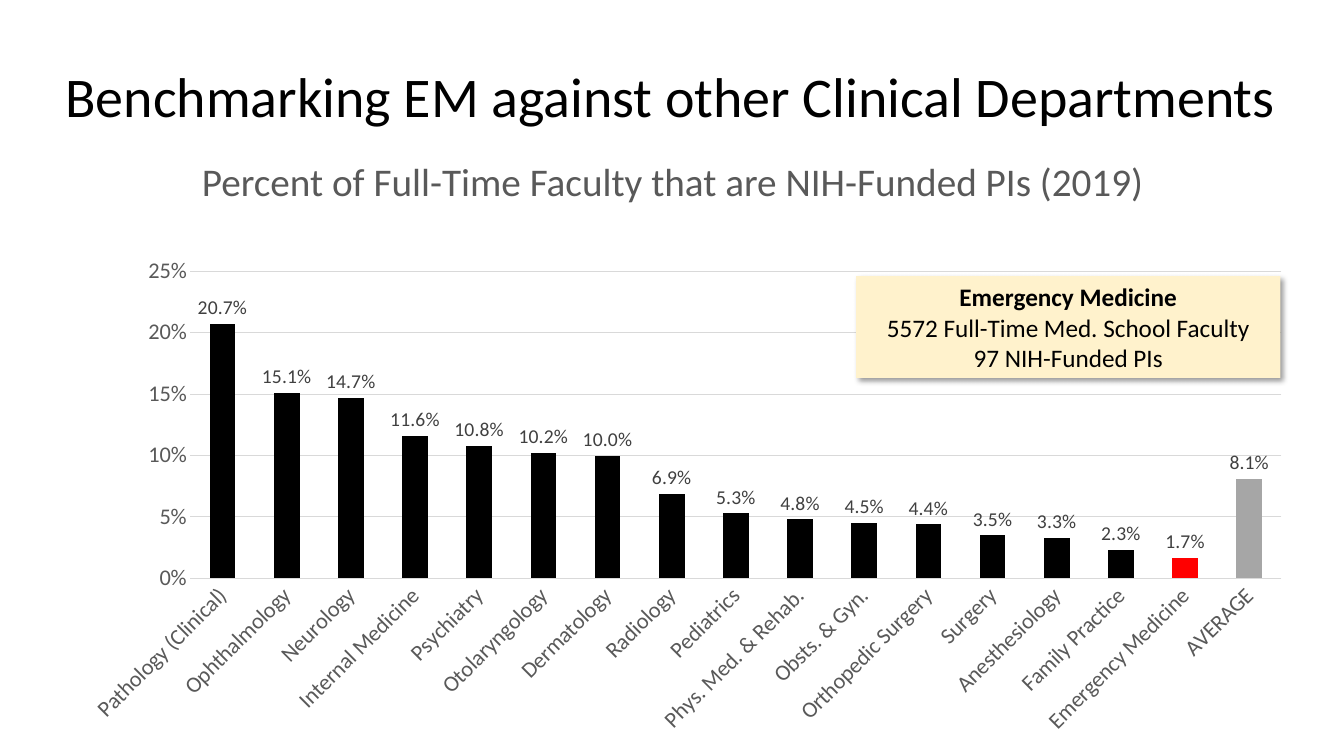
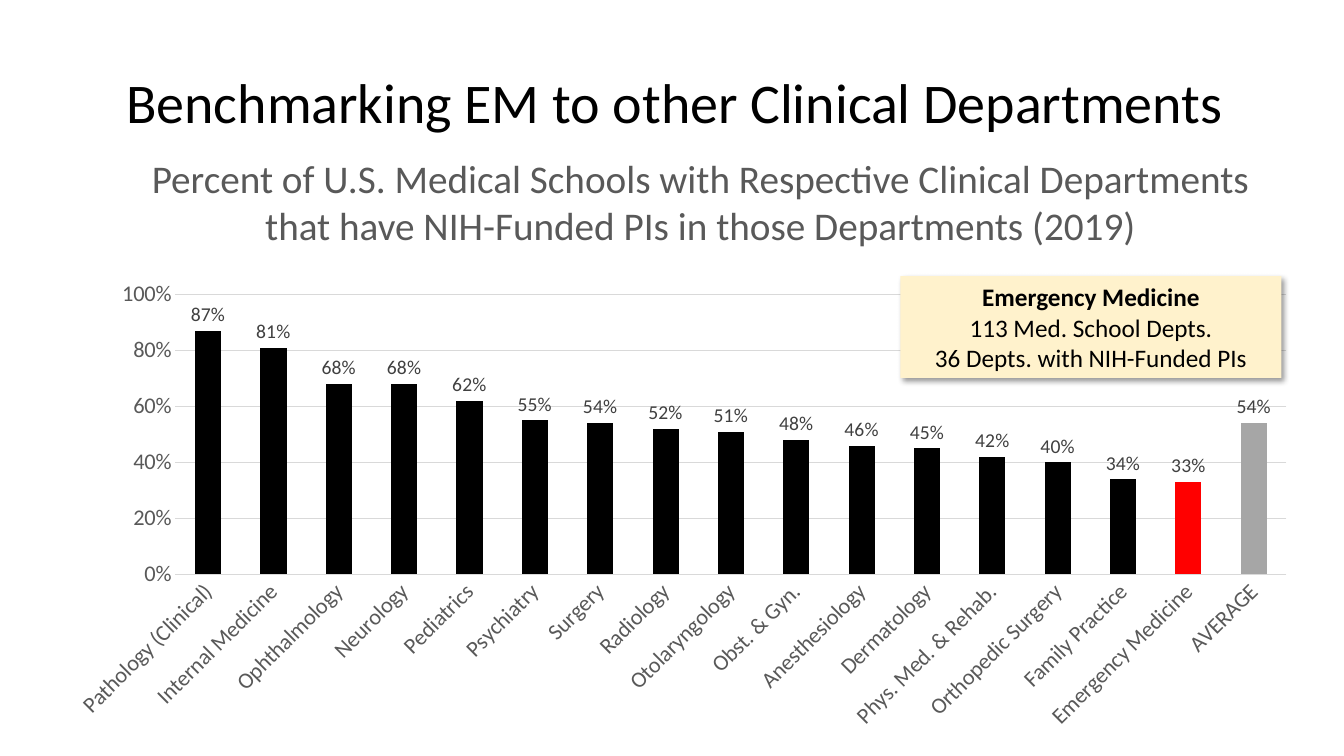
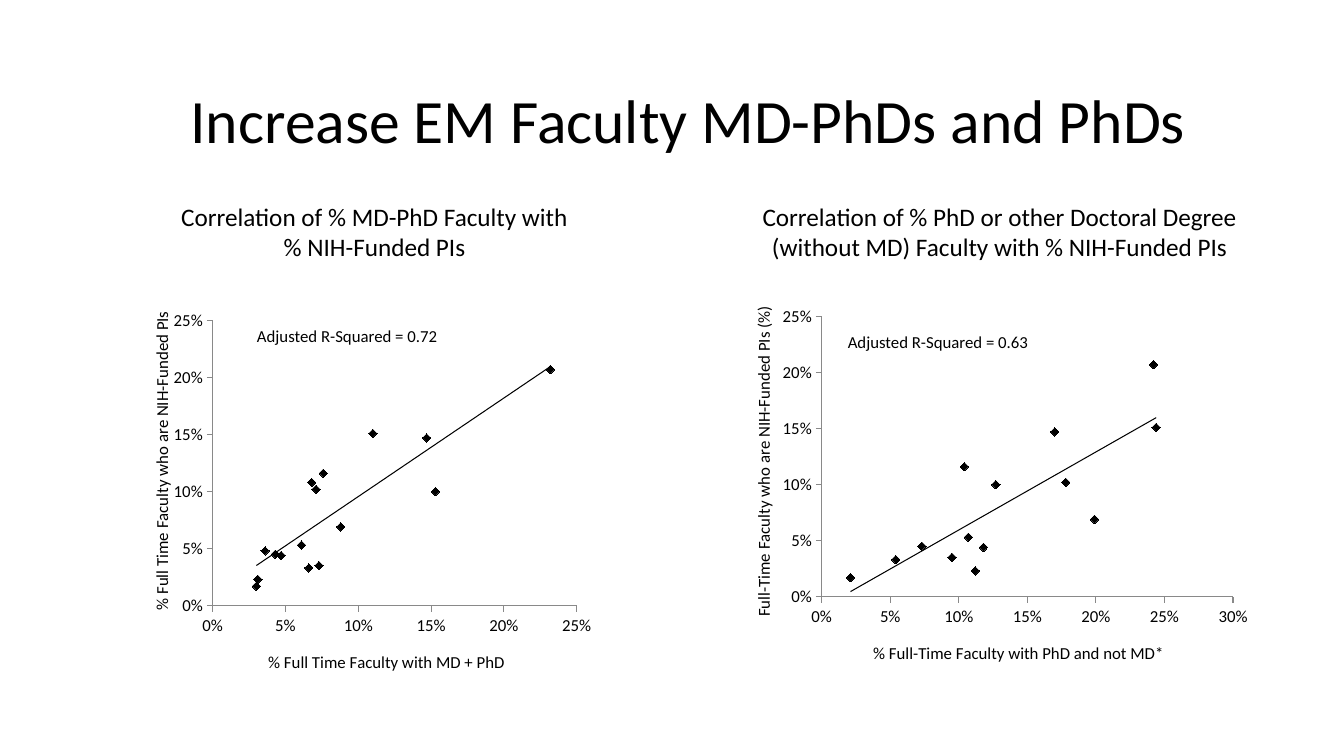
from pptx import Presentation
from pptx.chart.data import CategoryChartData, XyChartData
from pptx.dml.color import RGBColor
from pptx.enum.chart import (XL_CHART_TYPE, XL_LABEL_POSITION,
                             XL_MARKER_STYLE, XL_TICK_MARK)
from pptx.enum.shapes import MSO_SHAPE
from pptx.enum.text import MSO_ANCHOR, MSO_AUTO_SIZE, PP_ALIGN
from pptx.oxml import parse_xml
from pptx.oxml.ns import nsdecls, qn
from pptx.util import Pt

PX = 9144  # EMU in one px, 100 px to the inch
FONT = "Calibri"
COLORS = {
    "ink": "000000", "gray": "595959", "label": "404040", "grid": "D9D9D9",
    "axis": "898989", "focus": "FF0000", "average": "A6A6A6", "note": "FFF2CC",
}


def color(name):
    return RGBColor.from_string(COLORS[name])


def set_layout(parent, index, frame, place, target=""):
    """Place a plot area or chart title; both boxes are in slide px."""
    for old in parent.findall(qn("c:layout")):
        parent.remove(old)
    left, top, width, height = frame
    fractions = {"x": (place[0] - left) / width, "y": (place[1] - top) / height}
    if len(place) == 4:
        fractions.update(w=place[2] / width, h=place[3] / height)
    parts = [f'<c:{key}Mode val="edge"/>' for key in "xy"]
    parts += [f'<c:{key} val="{value:.4f}"/>' for key, value in fractions.items()]
    parent.insert(index, parse_xml(
        f'<c:layout {nsdecls("c")}><c:manualLayout>{target}'
        f'{"".join(parts)}</c:manualLayout></c:layout>'))


class Slides:
    def __init__(self):
        self.deck = Presentation()
        self.deck.slide_width, self.deck.slide_height = 1333 * PX, 750 * PX
        self.page = None

    def style_font(self, font, size, ink="ink", bold=False):
        font.name, font.size, font.bold = FONT, Pt(size), bold
        font.color.rgb = color(ink)

    def set_text(self, box, text, size, ink="ink", align=PP_ALIGN.CENTER):
        box.text_frame.text = text
        for para in box.text_frame.paragraphs:
            para.alignment = align
            for span in para.runs:
                self.style_font(span.font, size, ink)

    def add_page(self, title, place, size=40, align=PP_ALIGN.CENTER):
        self.page = self.deck.slides.add_slide(self.deck.slide_layouts[5])
        box = self.page.shapes.title
        box.left, box.top, box.width, box.height = (n * PX for n in place)
        self.set_text(box, title, size, align=align)
        frame = box.text_frame
        frame.vertical_anchor = MSO_ANCHOR.MIDDLE
        frame.auto_size = MSO_AUTO_SIZE.NONE
        frame.paragraphs[0].line_spacing = 0.9

    def add_text(self, text, place, size, ink="ink", align=PP_ALIGN.CENTER, wrap=True):
        box = self.page.shapes.add_textbox(*(n * PX for n in place))
        box.text_frame.word_wrap = wrap
        self.set_text(box, text, size, ink, align)

    def add_note(self, text, place):
        box = self.page.shapes.add_shape(MSO_SHAPE.RECTANGLE, *(n * PX for n in place))
        box.fill.solid()
        box.fill.fore_color.rgb = color("note")
        box.line.fill.background()
        box.shadow.inherit = False
        # Soft shadow to the lower right
        box.element.spPr.find(qn("a:effectLst")).append(parse_xml(
            f'<a:outerShdw {nsdecls("a")} blurRad="50800" dist="38100" '
            'dir="2700000" algn="tl" rotWithShape="0"><a:srgbClr val="000000">'
            '<a:alpha val="40000"/></a:srgbClr></a:outerShdw>'))
        self.set_text(box, text, 18)
        box.text_frame.paragraphs[0].runs[0].font.bold = True

    def add_chart(self, kind, data, place, plot):
        chart = self.page.shapes.add_chart(kind, *(n * PX for n in place), data).chart
        chart.has_legend = chart.has_title = False
        self.style_font(chart.font, 10)
        chart.plots[0].vary_by_categories = False
        set_layout(chart.element.find(".//" + qn("c:plotArea")), 0, place, plot,
                   '<c:layoutTarget val="inner"/>')
        return chart

    def style_axis(self, axis, size, ink, tick, line=None):
        axis.major_tick_mark, axis.minor_tick_mark = tick, XL_TICK_MARK.NONE
        axis.has_major_gridlines = False
        self.style_font(axis.tick_labels.font, size, ink)
        if line:
            axis.format.line.color.rgb = color(line)
            axis.format.line.width = Pt(0.75)
        else:
            axis.format.line.fill.background()

    def style_scale(self, axis, top, step):
        axis.minimum_scale, axis.maximum_scale, axis.major_unit = 0, top, step
        axis.tick_labels.number_format = "0%"
        axis.tick_labels.number_format_is_linked = False

    def add_columns(self, rows, place, plot, top, step, overlap, label_format):
        data = CategoryChartData()
        data.categories = [name for name, _ in rows]
        data.add_series("Series 1", [value for _, value in rows])
        chart = self.add_chart(XL_CHART_TYPE.COLUMN_CLUSTERED, data, place, plot)
        # Axes
        self.style_axis(chart.category_axis, 16, "gray", XL_TICK_MARK.NONE, "grid")
        slant = chart.element.xpath(".//c:catAx/c:txPr/a:bodyPr")[0]
        slant.set("rot", "-2700000")
        slant.set("vert", "horz")
        axis = chart.value_axis
        self.style_axis(axis, 16, "gray", XL_TICK_MARK.NONE)
        self.style_scale(axis, top, step)
        axis.has_major_gridlines = True
        axis.major_gridlines.format.line.color.rgb = color("grid")
        axis.major_gridlines.format.line.width = Pt(0.75)
        # Columns and their labels
        columns = chart.plots[0]
        columns.gap_width, columns.overlap = 150, overlap
        series = columns.series[0]
        last = len(rows) - 1
        fills = [(series, "ink"), (series.points[last - 1], "focus"),
                 (series.points[last], "average")]
        for part, ink in fills:
            part.format.fill.solid()
            part.format.fill.fore_color.rgb = color(ink)
        columns.has_data_labels = True
        labels = columns.data_labels
        labels.show_value = True
        labels.position = XL_LABEL_POSITION.OUTSIDE_END
        labels.number_format, labels.number_format_is_linked = label_format, False
        self.style_font(labels.font, 14, "label")

    def add_scatter(self, points, place, plot, x_top, titles):
        data = XyChartData()
        cloud = data.add_series("Series 1")
        for x, y in points:
            cloud.add_data_point(x, y)
        chart = self.add_chart(XL_CHART_TYPE.XY_SCATTER, data, place, plot)
        # Axes with placed titles
        axes = (chart.category_axis, chart.value_axis)
        for axis, top, (text, spot), turn in zip(axes, (x_top, 0.25), titles, (0, -5400000)):
            self.style_axis(axis, 12, "ink", XL_TICK_MARK.OUTSIDE, "axis")
            self.style_scale(axis, top, 0.05)
            frame = axis.axis_title.text_frame
            frame.text = text
            self.style_font(frame.paragraphs[0].runs[0].font, 12)
            title = axis.axis_title.element
            body = title.find(".//" + qn("a:bodyPr"))
            body.set("rot", str(turn))
            body.set("vert", "horz")
            set_layout(title, 1, place, spot)
        # Diamonds and trend line
        series = chart.plots[0].series[0]
        series.format.line.fill.background()
        series.marker.style, series.marker.size = XL_MARKER_STYLE.DIAMOND, 6
        series.marker.format.fill.solid()
        series.marker.format.fill.fore_color.rgb = color("ink")
        series.marker.format.line.color.rgb = color("ink")
        chart.element.find(".//" + qn("c:xVal")).addprevious(parse_xml(
            f'<c:trendline {nsdecls("c", "a")}><c:spPr><a:ln w="9525"><a:solidFill>'
            f'<a:srgbClr val="{COLORS["ink"]}"/></a:solidFill></a:ln></c:spPr>'
            '<c:trendlineType val="linear"/><c:dispRSqr val="0"/>'
            '<c:dispEq val="0"/></c:trendline>'))


FACULTY_SHARE = [
    ("Pathology (Clinical)", 0.207), ("Ophthalmology", 0.151), ("Neurology", 0.147),
    ("Internal Medicine", 0.116), ("Psychiatry", 0.108), ("Otolaryngology", 0.102),
    ("Dermatology", 0.1), ("Radiology", 0.069), ("Pediatrics", 0.053),
    ("Phys. Med. & Rehab.", 0.048), ("Obsts. & Gyn.", 0.045),
    ("Orthopedic Surgery", 0.044), ("Surgery", 0.035), ("Anesthesiology", 0.033),
    ("Family Practice", 0.023), ("Emergency Medicine", 0.017), ("AVERAGE", 0.081),
]
SCHOOL_SHARE = [
    ("Pathology (Clinical)", 0.87), ("Internal Medicine", 0.81), ("Ophthalmology", 0.68),
    ("Neurology", 0.68), ("Pediatrics", 0.62), ("Psychiatry", 0.55), ("Surgery", 0.54),
    ("Radiology", 0.52), ("Otolaryngology", 0.51), ("Obst. & Gyn.", 0.48),
    ("Anesthesiology", 0.46), ("Dermatology", 0.45), ("Phys. Med. & Rehab.", 0.42),
    ("Orthopedic Surgery", 0.4), ("Family Practice", 0.34),
    ("Emergency Medicine", 0.33), ("AVERAGE", 0.54),
]
MD_PHD_POINTS = [
    (0.232, 0.207), (0.153, 0.1), (0.147, 0.147), (0.11, 0.151), (0.088, 0.069),
    (0.076, 0.116), (0.073, 0.035), (0.071, 0.102), (0.068, 0.108), (0.066, 0.033),
    (0.061, 0.053), (0.047, 0.044), (0.043, 0.045), (0.036, 0.048), (0.031, 0.023),
    (0.03, 0.017),
]
PHD_POINTS = [
    (0.242, 0.207), (0.244, 0.151), (0.199, 0.069), (0.178, 0.102), (0.17, 0.147),
    (0.127, 0.1), (0.118, 0.044), (0.112, 0.023), (0.107, 0.053), (0.104, 0.116),
    (0.095, 0.035), (0.073, 0.045), (0.054, 0.033), (0.021, 0.017),
]


def main():
    slides = Slides()

    # Share of faculty
    slides.add_page("Benchmarking EM against other Clinical Departments",
                    (55, 26, 1240, 145), align=PP_ALIGN.LEFT)
    slides.add_columns(FACULTY_SHARE, (67, 245, 1228, 494), (189, 269, 1082, 305),
                       0.25, 0.05, -27, "0.0%")
    slides.add_text("Percent of Full-Time Faculty that are NIH-Funded PIs (2019)",
                    (92, 151, 1150, 57), 28, "gray")
    slides.add_note("Emergency Medicine\n5572 Full-Time Med. School Faculty\n"
                    "97 NIH-Funded PIs", (849, 274, 421, 101))

    # Share of schools
    slides.add_page("Benchmarking EM to other Clinical Departments", (67, 32, 1204, 145))
    slides.add_text("Percent of U.S. Medical Schools with Respective Clinical Departments "
                    "that have NIH-Funded PIs in those Departments (2019)",
                    (105, 148, 1179, 104), 28, "gray")
    slides.add_columns(SCHOOL_SHARE, (63, 261, 1233, 532), (174, 292, 1102, 278),
                       1, 0.2, -32, "0%")
    slides.add_note("Emergency Medicine\n113 Med. School Depts.\n"
                    "36 Depts. with NIH-Funded PIs", (893, 274, 378, 101))

    # Correlations
    slides.add_page("Increase EM Faculty MD-PhDs and PhDs", (108, 50, 1150, 145), 44)
    slides.add_scatter(MD_PHD_POINTS, (53, 291, 555, 423), (211, 318, 361, 283), 0.25,
                       [("% Full Time Faculty with MD + PhD", (263, 643)),
                        ("% Full Time Faculty who are NIH-Funded PIs", (146, 306))])
    slides.add_scatter(PHD_POINTS, (702, 299, 555, 401), (815, 314, 408, 278), 0.3,
                       [("% Full-Time Faculty with PhD and not MD*", (863, 634)),
                        ("Full-Time Faculty who are NIH-Funded PIs (%)", (743, 301))])
    slides.add_text("Correlation of % MD-PhD Faculty with % NIH-Funded PIs",
                    (168, 195, 407, 71), 18)
    slides.add_text("Correlation of % PhD or other Doctoral Degree\n"
                    "(without MD) Faculty with % NIH-Funded PIs", (690, 195, 603, 71), 18)
    for value, place in (("0.72", (245, 318, 201, 50)), ("0.63", (831, 324, 201, 30))):
        slides.add_text(f"Adjusted R-Squared = {value}", place, 12,
                        align=PP_ALIGN.LEFT, wrap=False)

    slides.deck.save("out.pptx")


if __name__ == "__main__":
    main()
